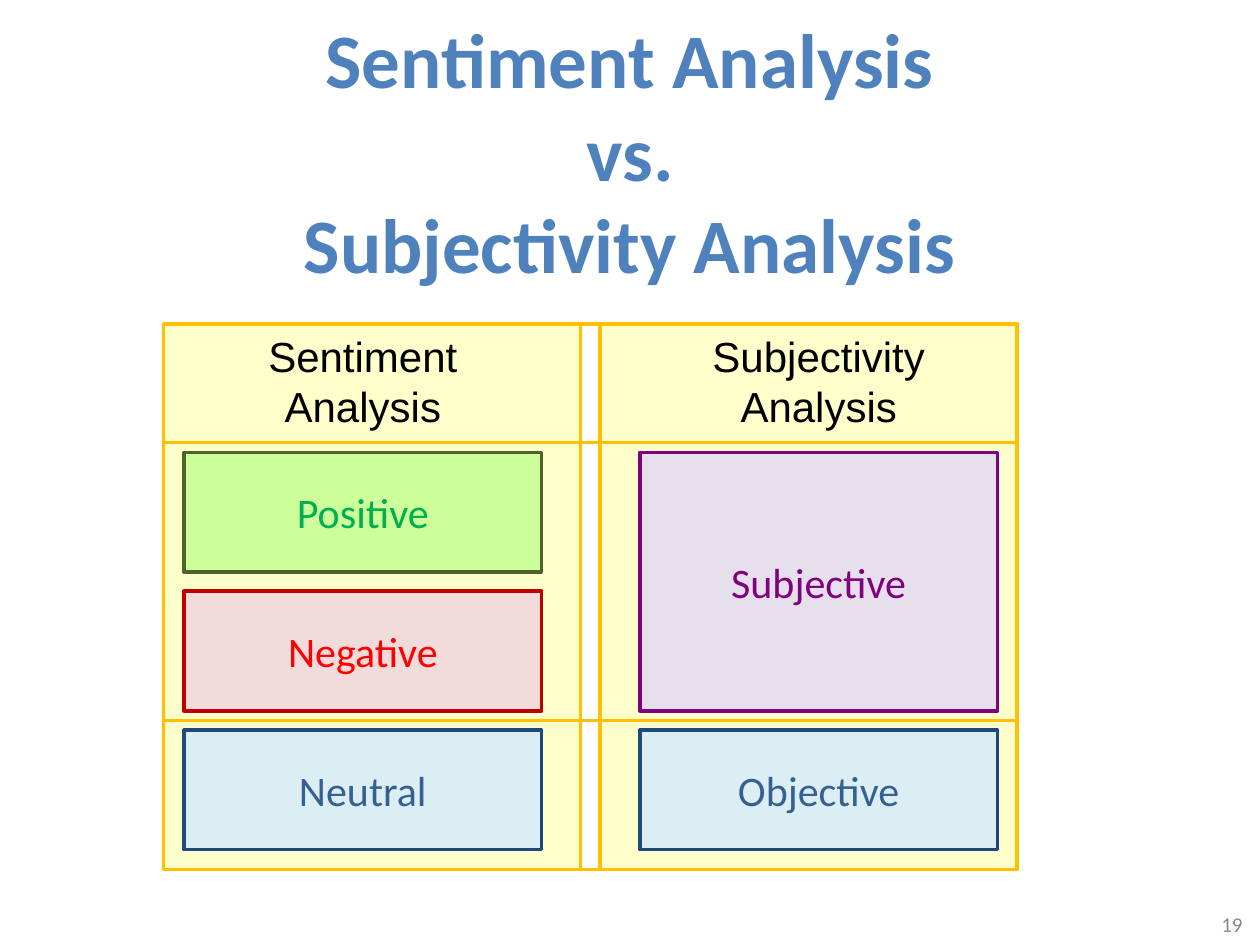
import pptx
import pptx.util
import pptx.dml.color
import pptx.enum.shapes
import pptx.enum.text

Cm = pptx.util.Cm
Pt = pptx.util.Pt
RGB = pptx.dml.color.RGBColor
ALIGN = pptx.enum.text.PP_ALIGN
ANCHOR = pptx.enum.text.MSO_ANCHOR

BLUE = RGB(0x4F, 0x81, 0xBD)
GRAY = RGB(0x89, 0x89, 0x89)
BLACK = RGB(0, 0, 0)
CREAM = RGB(0xFF, 0xFF, 0xCC)
GOLD = RGB(0xFF, 0xC0, 0x00)
LIME = RGB(0xCC, 0xFF, 0x99)
OLIVE = RGB(0x4F, 0x62, 0x28)
GREEN = RGB(0x00, 0xB0, 0x50)
PINK = RGB(0xF2, 0xDC, 0xDB)
DARKRED = RGB(0xC0, 0x00, 0x00)
RED = RGB(0xFF, 0x00, 0x00)
ICE = RGB(0xDB, 0xEE, 0xF4)
NAVY = RGB(0x1F, 0x49, 0x7D)
STEEL = RGB(0x37, 0x60, 0x92)
LILAC = RGB(0xE6, 0xE0, 0xEC)
PURPLE = RGB(0x80, 0x00, 0x80)

LEFT, TOP = 3.3, 6.53
COL, GAP = 8.4, 0.4
WIDE, HIGH = 2 * COL + GAP, 11
ROWS = [2.39, 5.61, 3]
CARD, STEP = 2.41, 2.8
CARDS = [3.71, 12.9]
CARDTOP, CARDWIDE = 9.12, 7.21


def place(x, y, w, h):
    return Cm(x), Cm(y), Cm(w), Cm(h)


def write(shape, text, size, color, font="Calibri", bold=False,
          align=ALIGN.CENTER, anchor=ANCHOR.MIDDLE):
    frame = shape.text_frame
    frame.word_wrap = True
    frame.auto_size = pptx.enum.text.MSO_AUTO_SIZE.NONE
    frame.vertical_anchor = anchor
    frame.text = text
    par = frame.paragraphs[0]
    par.alignment = align
    par.font.size = Pt(size)
    par.font.name = font
    par.font.bold = bold
    par.font.color.rgb = color


def add_rect(slide, box, line, fill=None):
    kind = pptx.enum.shapes.MSO_SHAPE.RECTANGLE
    rect = slide.shapes.add_shape(kind, *place(*box))
    rect.shadow.inherit = False
    rect.line.color.rgb = line
    rect.line.width = Pt(2)
    if fill is None:
        rect.fill.background()
    else:
        rect.fill.solid()
        rect.fill.fore_color.rgb = fill
    return rect


def add_card(slide, text, col, row, span, fill, line, color):
    high = CARD + (span - 1) * STEP
    box = CARDS[col], CARDTOP + row * STEP, CARDWIDE, high
    write(add_rect(slide, box, line, fill), text, 24, color)


def add_text(slide, box, text, size, color, **style):
    write(slide.shapes.add_textbox(*place(*box)), text, size, color, **style)


def add_title(slide, box, text):
    title = slide.shapes.title
    title.left, title.top, title.width, title.height = place(*box)
    write(title, text, 44, BLUE, bold=True)


def main():
    deck = pptx.Presentation()
    deck.slide_width, deck.slide_height = Cm(25.4), Cm(19.05)
    slide = deck.slides.add_slide(deck.slide_layouts[5])

    for col in range(2):
        x = LEFT + col * (COL + GAP)
        add_rect(slide, (x, TOP, COL, HIGH), GOLD, CREAM)

    add_title(slide, (1.27, 0.53, 22.86, 5),
              "Sentiment Analysis\vvs.\vSubjectivity Analysis")
    add_text(slide, (19.38, 18.11, 5.92, 1.02), "19", 12, GRAY,
             align=ALIGN.RIGHT)

    for card in [
        ("Positive", 0, 0, 1, LIME, OLIVE, GREEN),
        ("Negative", 0, 1, 1, PINK, DARKRED, RED),
        ("Neutral", 0, 2, 1, ICE, NAVY, STEEL),
        ("Objective", 1, 2, 1, ICE, NAVY, STEEL),
        ("Subjective", 1, 0, 2, LILAC, PURPLE, PURPLE),
    ]:
        add_card(slide, *card)

    for x, text in zip(CARDS, ["Sentiment Analysis", "Subjectivity Analysis"]):
        add_text(slide, (x, TOP, CARDWIDE, 2.31), text, 24, BLACK,
                 font="Arial", anchor=ANCHOR.TOP)

    y = TOP
    for high in ROWS:
        add_rect(slide, (LEFT, y, WIDE, high), GOLD)
        y += high

    deck.save("out.pptx")


if __name__ == "__main__":
    main()
